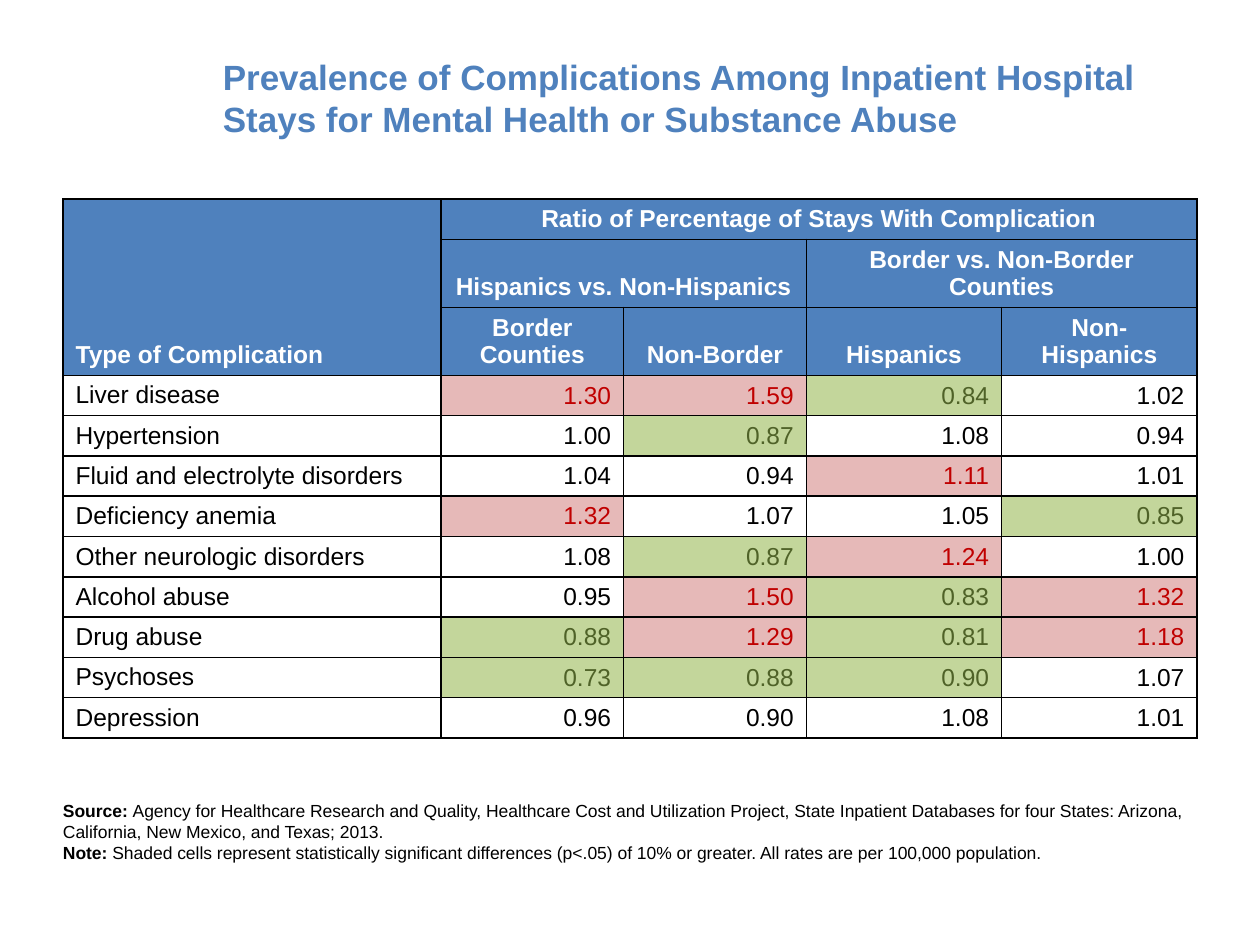
from dataclasses import dataclass

from lxml.etree import SubElement
from pptx import Presentation
from pptx.dml.color import RGBColor
from pptx.enum.text import MSO_ANCHOR, PP_ALIGN
from pptx.oxml.ns import qn
from pptx.util import Inches, Pt


@dataclass(frozen=True)
class Theme:
    font: str = "Arial"
    title_size: int = 20
    table_size: int = 14
    note_size: int = 10
    blue: str = "4F81BD"
    white: str = "FFFFFF"
    black: str = "000000"
    higher_text: str = "C00000"
    higher_fill: str = "E6B9B8"
    lower_text: str = "4F6228"
    lower_fill: str = "C3D69B"


THEME = Theme()

TITLE = ("Prevalence of Complications Among Inpatient Hospital "
         "Stays for Mental Health or Substance Abuse")

COLUMN_WIDTHS = (3, 1.45, 1.45, 1.55, 1.55)
HEADER_HEIGHTS = (0.32, 0.54, 0.54)
ROW_HEIGHT = 0.32

# text, row, column, rows spanned, columns spanned
HEADERS = (
    ("Type of Complication", 0, 0, 3, 1),
    ("Ratio of Percentage of Stays With Complication", 0, 1, 1, 4),
    ("Hispanics vs. Non-Hispanics", 1, 1, 1, 2),
    ("Border vs. Non-Border Counties", 1, 3, 1, 2),
    ("Border Counties", 2, 1, 1, 1),
    ("Non-Border", 2, 2, 1, 1),
    ("Hispanics", 2, 3, 1, 1),
    ("Non-Hispanics", 2, 4, 1, 1),
)

# complication, ratios, significance of each ratio (+ higher, - lower, = none)
COMPLICATIONS = (
    ("Liver disease", (1.30, 1.59, 0.84, 1.02), "++-="),
    ("Hypertension", (1.00, 0.87, 1.08, 0.94), "=-=="),
    ("Fluid and electrolyte disorders", (1.04, 0.94, 1.11, 1.01), "==+="),
    ("Deficiency anemia", (1.32, 1.07, 1.05, 0.85), "+==-"),
    ("Other neurologic disorders", (1.08, 0.87, 1.24, 1.00), "=-+="),
    ("Alcohol abuse", (0.95, 1.50, 0.83, 1.32), "=+-+"),
    ("Drug abuse", (0.88, 1.29, 0.81, 1.18), "-+-+"),
    ("Psychoses", (0.73, 0.88, 0.90, 1.07), "---="),
    ("Depression", (0.96, 0.90, 1.08, 1.01), "===="),
)

# significance: text colour, fill colour
SHADING = {
    "+": (THEME.higher_text, THEME.higher_fill),
    "-": (THEME.lower_text, THEME.lower_fill),
    "=": (THEME.black, None),
}

NOTES = (
    ("Source: ", "Agency for Healthcare Research and Quality, Healthcare Cost and "
                 "Utilization Project, State Inpatient Databases for four States: "
                 "Arizona, California, New Mexico, and Texas; 2013."),
    ("Note: ", "Shaded cells represent statistically significant differences "
               "(p<.05) of 10% or greater. All rates are per 100,000 population."),
)


def add_run(paragraph, text, size, color, bold=False):
    run = paragraph.add_run()
    run.text = text
    formats = {"name": THEME.font, "size": Pt(size), "bold": bold}
    for name, value in formats.items():
        setattr(run.font, name, value)
    run.font.color.rgb = RGBColor.from_string(color)


def add_text_box(slide, left, top, width, height, **formats):
    box = slide.shapes.add_textbox(Inches(left), Inches(top), Inches(width), Inches(height))
    for name, value in {"word_wrap": True, **formats}.items():
        setattr(box.text_frame, name, value)
    return box.text_frame


def set_borders(cell):
    properties = cell._tc.get_or_add_tcPr()
    for side in ("lnL", "lnR", "lnT", "lnB"):
        line = SubElement(properties, qn(f"a:{side}"), w=str(Pt(1)))
        fill = SubElement(line, qn("a:solidFill"))
        SubElement(fill, qn("a:srgbClr"), val=THEME.black)


def set_fill(cell, color):
    if color:
        cell.fill.solid()
        cell.fill.fore_color.rgb = RGBColor.from_string(color)
    else:
        cell.fill.background()


def write_cell(cell, text, color, fill=None, bold=False,
               align=PP_ALIGN.LEFT, anchor=MSO_ANCHOR.BOTTOM):
    set_fill(cell, fill)
    cell.vertical_anchor = anchor
    paragraph = cell.text_frame.paragraphs[0]
    paragraph.alignment = align
    add_run(paragraph, text, THEME.table_size, color, bold)


def write_headers(table):
    for text, row, column, rows, columns in HEADERS:
        cell = table.cell(row, column)
        if rows * columns > 1:
            cell.merge(table.cell(row + rows - 1, column + columns - 1))
        write_cell(cell, text, THEME.white, THEME.blue, bold=True,
                   align=PP_ALIGN.CENTER if column else PP_ALIGN.LEFT,
                   anchor=MSO_ANCHOR.MIDDLE if columns == 4 else MSO_ANCHOR.BOTTOM)


def write_ratios(table):
    for row, (complication, ratios, marks) in enumerate(COMPLICATIONS, len(HEADER_HEIGHTS)):
        write_cell(table.cell(row, 0), complication, THEME.black, anchor=MSO_ANCHOR.TOP)
        for column, (ratio, mark) in enumerate(zip(ratios, marks), 1):
            color, fill = SHADING[mark]
            write_cell(table.cell(row, column), f"{ratio:.2f}", color, fill,
                       align=PP_ALIGN.RIGHT)


def add_complications_table(slide):
    heights = HEADER_HEIGHTS + (ROW_HEIGHT,) * len(COMPLICATIONS)
    table = slide.shapes.add_table(
        len(heights), len(COLUMN_WIDTHS), Inches(0.5), Inches(1.58),
        Inches(sum(COLUMN_WIDTHS)), Inches(sum(heights))).table
    table.first_row = table.horz_banding = False
    for column, width in zip(table.columns, COLUMN_WIDTHS):
        column.width = Inches(width)
    for row, height in zip(table.rows, heights):
        row.height = Inches(height)
    for cell in table.iter_cells():
        set_borders(cell)
    write_headers(table)
    write_ratios(table)


def add_title(slide):
    frame = add_text_box(slide, 1.67, 0.3, 7.83, 0.95, vertical_anchor=MSO_ANCHOR.MIDDLE)
    add_run(frame.paragraphs[0], TITLE, THEME.title_size, THEME.blue, bold=True)


def add_notes(slide):
    frame = add_text_box(slide, 0.5, 6.3, 9, 0.77, margin_left=0)
    for index, (label, text) in enumerate(NOTES):
        paragraph = frame.add_paragraph() if index else frame.paragraphs[0]
        add_run(paragraph, label, THEME.note_size, THEME.black, bold=True)
        add_run(paragraph, text, THEME.note_size, THEME.black)


def main():
    presentation = Presentation()
    presentation.slide_width = Inches(10)
    presentation.slide_height = Inches(7.5)
    slide = presentation.slides.add_slide(presentation.slide_layouts[6])
    add_complications_table(slide)
    add_title(slide)
    add_notes(slide)
    presentation.save("out.pptx")


if __name__ == "__main__":
    main()
